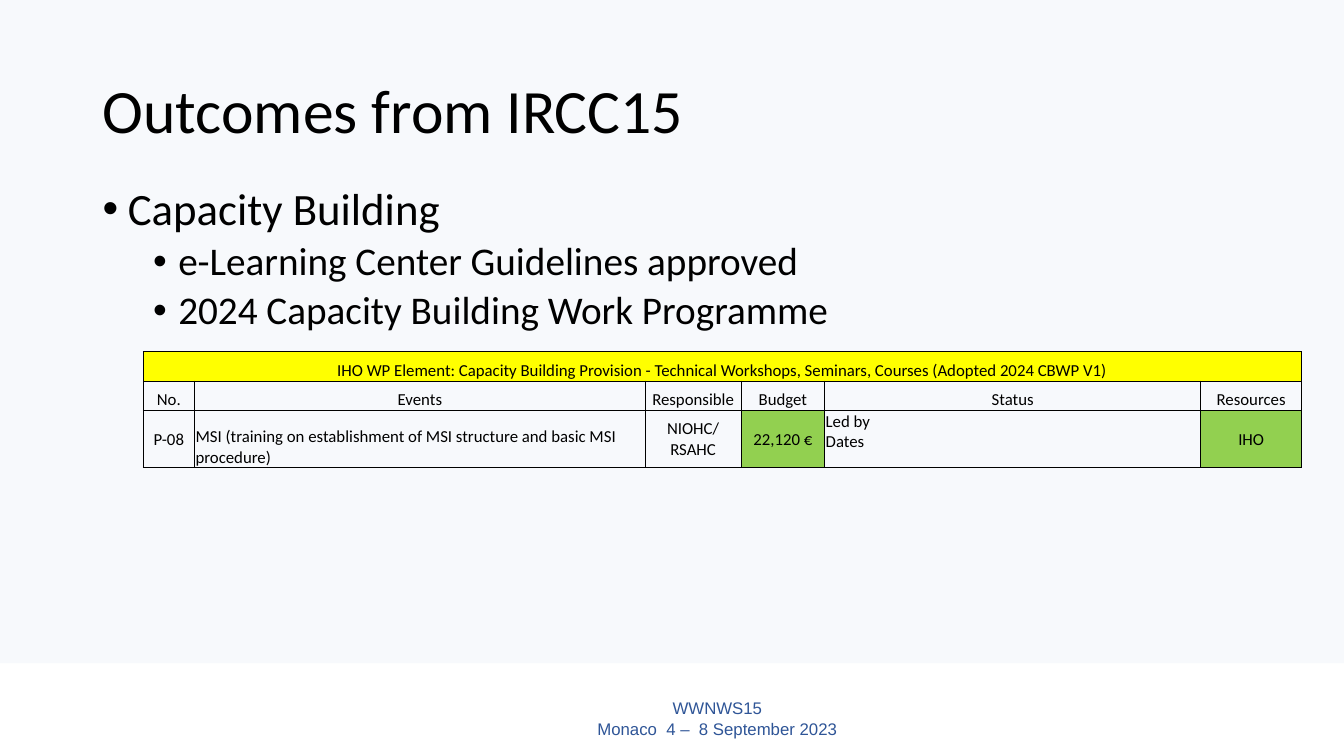
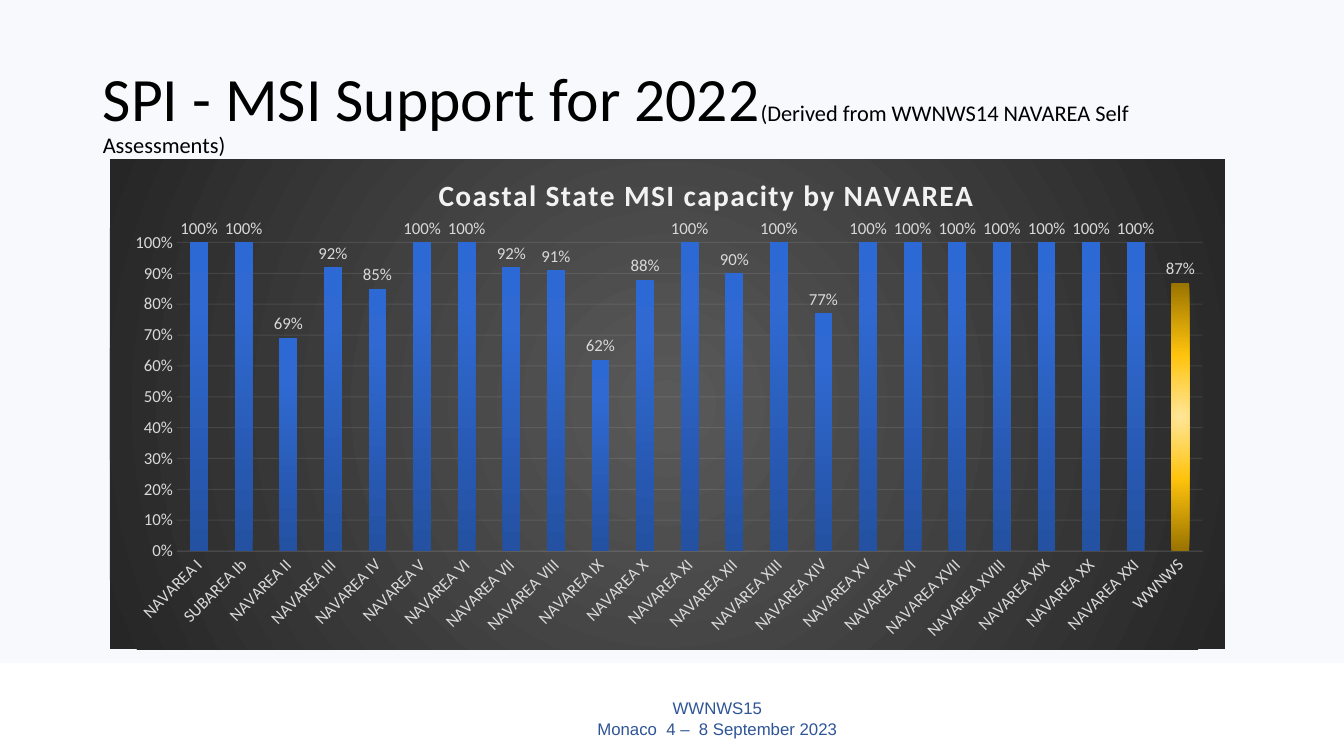
from dataclasses import dataclass
from typing import Any, Optional

from lxml import etree
from pptx import Presentation
from pptx.chart import data as cdata
from pptx.dml.color import RGBColor
from pptx.enum import chart as ch
from pptx.enum import shapes as sh
from pptx.enum import text as tx
from pptx.oxml import parse_xml
from pptx.oxml import ns
from pptx.util import Inches, Pt

BLACK = RGBColor(0x00, 0x00, 0x00)
MIST = RGBColor(0xDA, 0xE3, 0xF3)
NAVY = RGBColor(0x2F, 0x55, 0x97)
YELLOW = RGBColor(0xFF, 0xFF, 0x00)
GREEN = RGBColor(0x92, 0xD0, 0x50)
PALE = RGBColor(0xF2, 0xF2, 0xF2)
SILVER = RGBColor(0xD9, 0xD9, 0xD9)
FONT = "Calibri"

CENTER, LEFT = tx.PP_ALIGN.CENTER, tx.PP_ALIGN.LEFT
TOP, MIDDLE, BOTTOM = (tx.MSO_ANCHOR.TOP, tx.MSO_ANCHOR.MIDDLE,
                       tx.MSO_ANCHOR.BOTTOM)


@dataclass(frozen=True)
class Part:
    words: str
    size: int


@dataclass(frozen=True)
class Item:
    words: str
    size: int
    indent: float
    level: int = 0
    before: int = 0


@dataclass(frozen=True)
class Entry:
    words: str
    align: Any = CENTER
    anchor: Any = BOTTOM
    fill: Optional[RGBColor] = None


@dataclass(frozen=True)
class Blend:
    stops: tuple[tuple[int, RGBColor], ...]
    angle: Optional[int] = None


SLATE = Blend(((0, RGBColor(0x59, 0x59, 0x59)),
               (100, RGBColor(0x26, 0x26, 0x26))))
BLUE = Blend(((0, RGBColor(0x24, 0x51, 0xA1)),
              (80, RGBColor(0x2F, 0x69, 0xD1)),
              (100, RGBColor(0x2C, 0x69, 0xD5))), 270)
GOLD = Blend(((0, RGBColor(0xFF, 0xE6, 0x99)),
              (46, RGBColor(0xFF, 0xC3, 0x0D)),
              (100, RGBColor(0x99, 0x73, 0x00))))

ITEMS = (
    Item("Capacity Building", 32, 0.25),
    Item("e-Learning Center Guidelines approved", 28, 0.75, 1, 5),
    Item("2024 Capacity Building Work Programme", 28, 0.75, 1, 5),
)
WIDTHS = (0.51, 4.47, 0.95, 0.83, 3.73, 1)
HEIGHTS = (0.29, 0.29, 0.57)
HEADS = ("No.", "Events", "Responsible", "Budget", "Status", "Resources")
ROWS = (
    (Entry("IHO WP Element: Capacity Building Provision - Technical "
           "Workshops, Seminars, Courses (Adopted 2024 CBWP V1)",
           fill=YELLOW),) + (Entry("", fill=YELLOW),) * 5,
    tuple(Entry(head) for head in HEADS),
    (Entry("P-08", anchor=MIDDLE),
     Entry("MSI (training on establishment of MSI structure and basic MSI "
           "procedure)", LEFT),
     Entry("NIOHC/ RSAHC", anchor=MIDDLE),
     Entry("22,120 €", anchor=MIDDLE, fill=GREEN),
     Entry("Led by\nDates", LEFT, TOP),
     Entry("IHO", anchor=MIDDLE, fill=GREEN)),
)
AREAS = ("NAVAREA I", "SUBAREA Ib") + tuple(
    f"NAVAREA {num}" for num in
    ("II III IV V VI VII VIII IX X XI XII XIII XIV XV XVI XVII XVIII "
     "XIX XX XXI").split()) + ("WWNWS",)
RATES = (1, 1, 0.69, 0.92, 0.85, 1, 1, 0.92, 0.91, 0.62, 0.88, 1, 0.9, 1,
         0.77, 1, 1, 1, 1, 1, 1, 1, 0.87)


def style(font: Any, size: int, color: RGBColor = BLACK,
          name: str = FONT, bold: bool = False) -> None:
    font.size, font.name, font.bold = Pt(size), name, bold
    font.color.rgb = color


def fade(props: Any, percent: int) -> None:
    for color in props.iter(ns.qn("a:srgbClr")):
        etree.SubElement(color, ns.qn("a:alpha"), val=str(percent * 1000))


def blend(props: Any, look: Blend) -> None:
    stops = "".join(f'<a:gs pos="{pos * 1000}"><a:srgbClr val="{color}"/></a:gs>'
                    for pos, color in look.stops)
    if look.angle is None:
        way = ('<a:path path="circle"><a:fillToRect l="50000" t="50000" '
               'r="50000" b="50000"/></a:path>')
    else:
        way = f'<a:lin ang="{look.angle * 60000}" scaled="0"/>'
    props.insert(0, parse_xml(f'<a:gradFill {ns.nsdecls("a")}><a:gsLst>{stops}'
                              f'</a:gsLst>{way}</a:gradFill>'))


def place(parent: Any, index: int, **box: float) -> None:
    old = parent.find(ns.qn("c:layout"))
    if old is not None:
        parent.remove(old)
    modes = '<c:xMode val="edge"/><c:yMode val="edge"/>'
    if "w" in box:
        modes = '<c:layoutTarget val="inner"/>' + modes
    sides = "".join(f'<c:{key} val="{val}"/>' for key, val in box.items())
    parent.insert(index, parse_xml(
        f'<c:layout {ns.nsdecls("c")}><c:manualLayout>{modes}{sides}'
        '</c:manualLayout></c:layout>'))


def frame(slide: Any, layout: Any) -> None:
    band = slide.shapes.add_shape(sh.MSO_SHAPE.RECTANGLE, 0, 0,
                                  Inches(13.33), Inches(6.58))
    band.shadow.inherit = False
    band.fill.solid()
    band.fill.fore_color.rgb = MIST
    band.line.fill.background()
    fade(band._element.spPr, 21)
    foot = slide.shapes.add_textbox(Inches(4.22), Inches(6.9),
                                    Inches(5.79), Inches(0.45))
    foot.text_frame.word_wrap = True
    foot.text_frame.vertical_anchor = MIDDLE
    line = foot.text_frame.paragraphs[0]
    line.text = "WWNWS15\vMonaco  4 –  8 September 2023"
    line.alignment = CENTER
    for run in line.runs:
        style(run.font, 12, NAVY, "Arial")
    for pos, shape in enumerate((band, foot)):
        layout.shapes._spTree.insert(2 + pos, shape._element)


def title(slide: Any, width: float, *parts: Part) -> None:
    shape = slide.shapes.title
    shape.left, shape.top = Inches(0.92), Inches(0.4)
    shape.width, shape.height = Inches(width), Inches(1.45)
    box = shape.text_frame
    box.auto_size = tx.MSO_AUTO_SIZE.NONE
    box.vertical_anchor = MIDDLE
    line = box.paragraphs[0]
    line.alignment, line.line_spacing = LEFT, 0.9
    for part in parts:
        run = line.add_run()
        run.text = part.words
        style(run.font, part.size)


def bullets(slide: Any) -> None:
    box = slide.shapes.add_textbox(Inches(0.92), Inches(1.8),
                                   Inches(11.5), Inches(4.76)).text_frame
    box.word_wrap = True
    box.text = "\n".join(item.words for item in ITEMS)
    for line, item in zip(box.paragraphs, ITEMS):
        line.level, line.line_spacing = item.level, 0.9
        line.space_before = Pt(item.before)
        props = line._p.get_or_add_pPr()
        props.set("marL", str(Inches(item.indent)))
        props.set("indent", str(Inches(-0.25)))
        etree.SubElement(props, ns.qn("a:buFont"), typeface="Arial")
        etree.SubElement(props, ns.qn("a:buChar"), char="•")
        for run in line.runs:
            style(run.font, item.size)


def edge(cell: Any) -> None:
    props = cell._tc.get_or_add_tcPr()
    for side in "LRTB":
        props.append(parse_xml(
            f'<a:ln{side} {ns.nsdecls("a")} w="{Pt(0.5)}"><a:solidFill>'
            f'<a:srgbClr val="{BLACK}"/></a:solidFill></a:ln{side}>'))


def fill(cell: Any, entry: Entry) -> None:
    edge(cell)
    if entry.fill is None:
        cell.fill.background()
    else:
        cell.fill.solid()
        cell.fill.fore_color.rgb = entry.fill
    cell.margin_left = cell.margin_right = cell.margin_top = Inches(0.01)
    cell.margin_bottom = 0
    cell.vertical_anchor = entry.anchor
    cell.text_frame.text = entry.words
    for line in cell.text_frame.paragraphs:
        line.alignment = entry.align
        style(line.font, 12)
        for run in line.runs:
            style(run.font, 12)


def table(slide: Any) -> None:
    grid = slide.shapes.add_table(len(HEIGHTS), len(WIDTHS), Inches(1.42),
                                  Inches(3.49), Inches(11.5),
                                  Inches(1.14)).table
    grid.first_row = grid.horz_banding = False
    for col, width in zip(grid.columns, WIDTHS):
        col.width = Inches(width)
    for row, height, entries in zip(grid.rows, HEIGHTS, ROWS):
        row.height = Inches(height)
        for cell, entry in zip(row.cells, entries):
            fill(cell, entry)
    grid.cell(0, 0).merge(grid.cell(0, len(WIDTHS) - 1))


def rule(form: Any) -> None:
    form.line.width = Pt(0.75)
    form.line.color.rgb = PALE
    fade(form._element.find(ns.qn("c:spPr")), 10)


def chart(slide: Any) -> None:
    data = cdata.CategoryChartData(number_format="0%")
    data.categories = AREAS
    data.add_series("Series 1", RATES)
    graph = slide.shapes.add_chart(
        ch.XL_CHART_TYPE.COLUMN_CLUSTERED, Inches(1.09), Inches(1.58),
        Inches(11.06), Inches(4.86), data).chart
    style(graph.font, 10)
    graph.has_legend = False
    graph.has_title = True
    head = graph.chart_title
    head.text_frame.text = "Coastal State MSI capacity by NAVAREA"
    run = head.text_frame.paragraphs[0].runs[0]
    style(run.font, 21, PALE, bold=True)
    run.font._element.set("spc", "100")
    place(head._element, 1, x=0.29, y=0.02)

    space = graph._chartSpace
    back = parse_xml(f'<c:spPr {ns.nsdecls("c", "a")}><a:ln><a:noFill/></a:ln>'
                     '</c:spPr>')
    blend(back, SLATE)
    space.find(ns.qn("c:chart")).addnext(back)
    place(space.chart.plotArea, 0, x=0.06, y=0.17, w=0.92, h=0.63)

    base, scale = graph.category_axis, graph.value_axis
    for axis in (base, scale):
        axis.major_tick_mark = axis.minor_tick_mark = ch.XL_TICK_MARK.NONE
        style(axis.tick_labels.font, 12, SILVER)
    base._element.find(ns.qn("c:txPr")).find(
        ns.qn("a:bodyPr")).set("rot", str(-45 * 60000))
    rule(base.format)
    scale.minimum_scale, scale.maximum_scale, scale.major_unit = 0, 1, 0.1
    scale.tick_labels.number_format = "0%"
    scale.tick_labels.number_format_is_linked = False
    scale.format.line.fill.background()
    scale.has_major_gridlines = True
    rule(scale.major_gridlines.format)

    plot = graph.plots[0]
    plot.gap_width, plot.vary_by_categories = 150, False
    bars = plot.series[0]
    bars.invert_if_negative = False
    total = bars.points[len(RATES) - 1]
    for form, look in ((bars.format, BLUE), (total.format, GOLD)):
        blend(form._element.get_or_add_spPr(), look)
    plot.has_data_labels = True
    labels = plot.data_labels
    labels.show_value = True
    labels.position = ch.XL_LABEL_POSITION.OUTSIDE_END
    labels.number_format, labels.number_format_is_linked = "0%", False
    style(labels.font, 12, SILVER)


def main() -> None:
    deck = Presentation()
    deck.slide_width, deck.slide_height = Inches(13.33), Inches(7.5)
    layout = deck.slide_layouts[5]
    first, second = (deck.slides.add_slide(layout) for _ in range(2))
    frame(first, layout)
    title(first, 11.5, Part("Outcomes from IRCC15", 44))
    bullets(first)
    table(first)
    title(second, 11.63, Part("SPI - MSI Support for 2022", 44),
          Part("(Derived from WWNWS14 NAVAREA Self Assessments)", 16))
    chart(second)
    deck.save("out.pptx")


if __name__ == "__main__":
    main()
